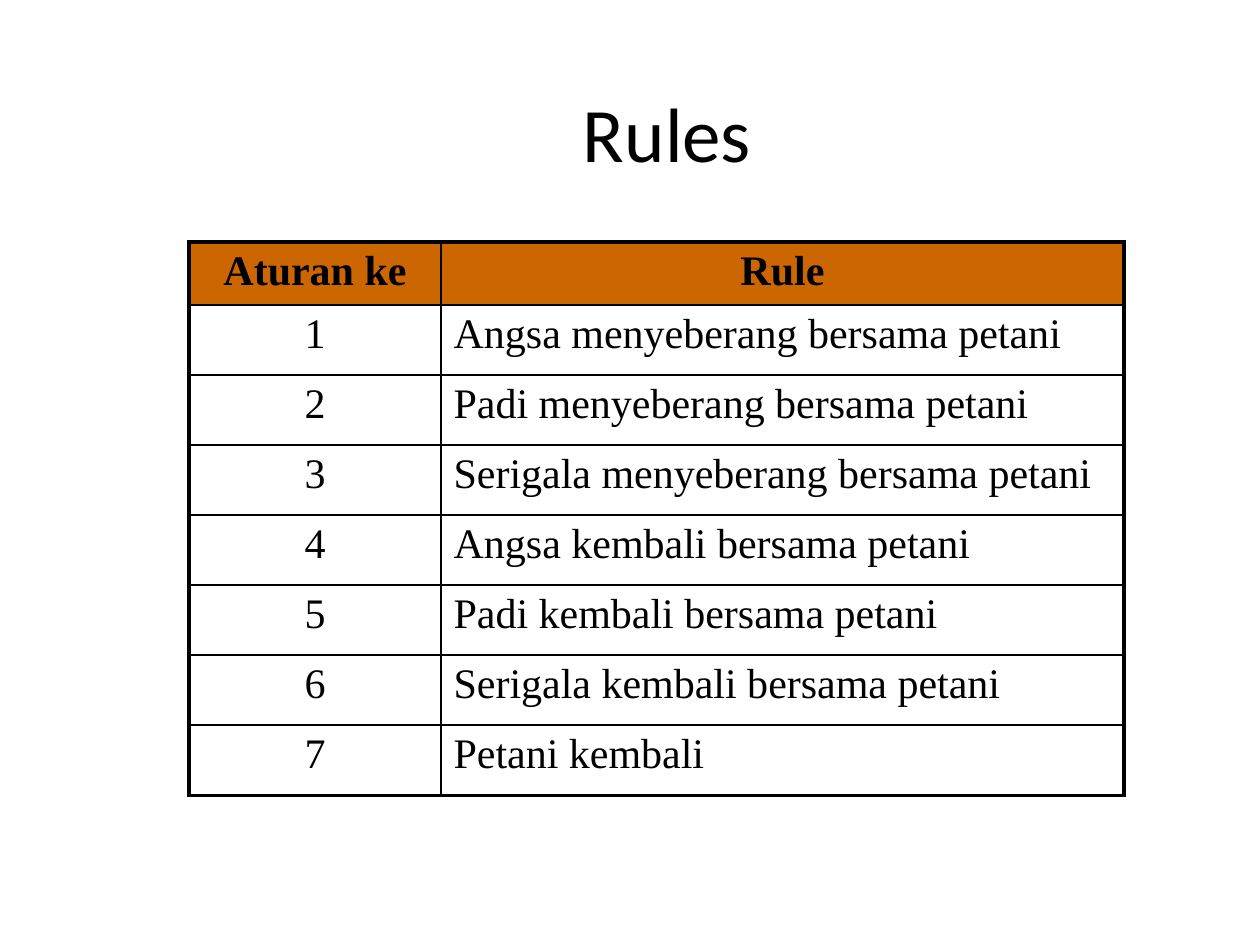
from lxml.etree import SubElement
from pptx import Presentation
from pptx.dml.color import RGBColor
from pptx.enum.text import MSO_ANCHOR, PP_ALIGN
from pptx.oxml.ns import qn
from pptx.util import Inches, Pt

HEAD = ("Aturan ke", "Rule")
RULES = [
    "Angsa menyeberang bersama petani",
    "Padi menyeberang bersama petani",
    "Serigala menyeberang bersama petani",
    "Angsa kembali bersama petani",
    "Padi kembali bersama petani",
    "Serigala kembali bersama petani",
    "Petani kembali",
]
ROWS = [HEAD] + [(str(n), rule) for n, rule in enumerate(RULES, 1)]
COLS = (2, 5.42)
HEAD_H, ROW_H = 0.39, 0.556
BLACK, ORANGE = "000000", "CC6600"
THICK, THIN = 2.25, 1


def color(code):
    return RGBColor.from_string(code)


def write(frame, text, font, size, align, bold=False):
    para = frame.paragraphs[0]
    para.alignment = align
    run = para.add_run()
    run.text = text
    run.font.name = font
    run.font.size = Pt(size)
    run.font.bold = bold
    run.font.color.rgb = color(BLACK)


def border(cell, row, col):
    """Thick lines on the table's outer edge, thin ones inside."""
    outer = {
        "L": col == 0,
        "R": col == len(COLS) - 1,
        "T": row == 0,
        "B": row == len(ROWS) - 1,
    }
    props = cell._tc.get_or_add_tcPr()
    for at, (side, edge) in enumerate(outer.items()):
        line = SubElement(props, qn(f"a:ln{side}"), w=str(Pt(THICK if edge else THIN)))
        props.insert(at, line)
        fill = SubElement(line, qn("a:solidFill"))
        SubElement(fill, qn("a:srgbClr"), val=BLACK)


def add_title(slide):
    box = slide.shapes.add_textbox(Inches(1.67), Inches(0.42), Inches(7.25), Inches(1.25))
    frame = box.text_frame
    frame.word_wrap = True
    frame.vertical_anchor = MSO_ANCHOR.MIDDLE
    write(frame, "Rules", "Calibri", 44, PP_ALIGN.CENTER)


def add_rules(slide):
    high = HEAD_H + ROW_H * len(RULES)
    table = slide.shapes.add_table(
        len(ROWS), len(COLS), Inches(1.5), Inches(1.92), Inches(sum(COLS)), Inches(high)
    ).table
    for col, wide in zip(table.columns, COLS):
        col.width = Inches(wide)
    for r, texts in enumerate(ROWS):
        head = r == 0
        table.rows[r].height = Inches(HEAD_H if head else ROW_H)
        for c, text in enumerate(texts):
            cell = table.cell(r, c)
            if head:
                cell.fill.solid()
                cell.fill.fore_color.rgb = color(ORANGE)
            else:
                cell.fill.background()
            border(cell, r, c)
            align = PP_ALIGN.CENTER if head or c == 0 else PP_ALIGN.LEFT
            write(cell.text_frame, text, "Times New Roman", 24, align, head)


def main():
    deck = Presentation()
    deck.slide_width, deck.slide_height = Inches(10), Inches(7.5)
    slide = deck.slides.add_slide(deck.slide_layouts[6])
    add_title(slide)
    add_rules(slide)
    deck.save("out.pptx")


if __name__ == "__main__":
    main()
